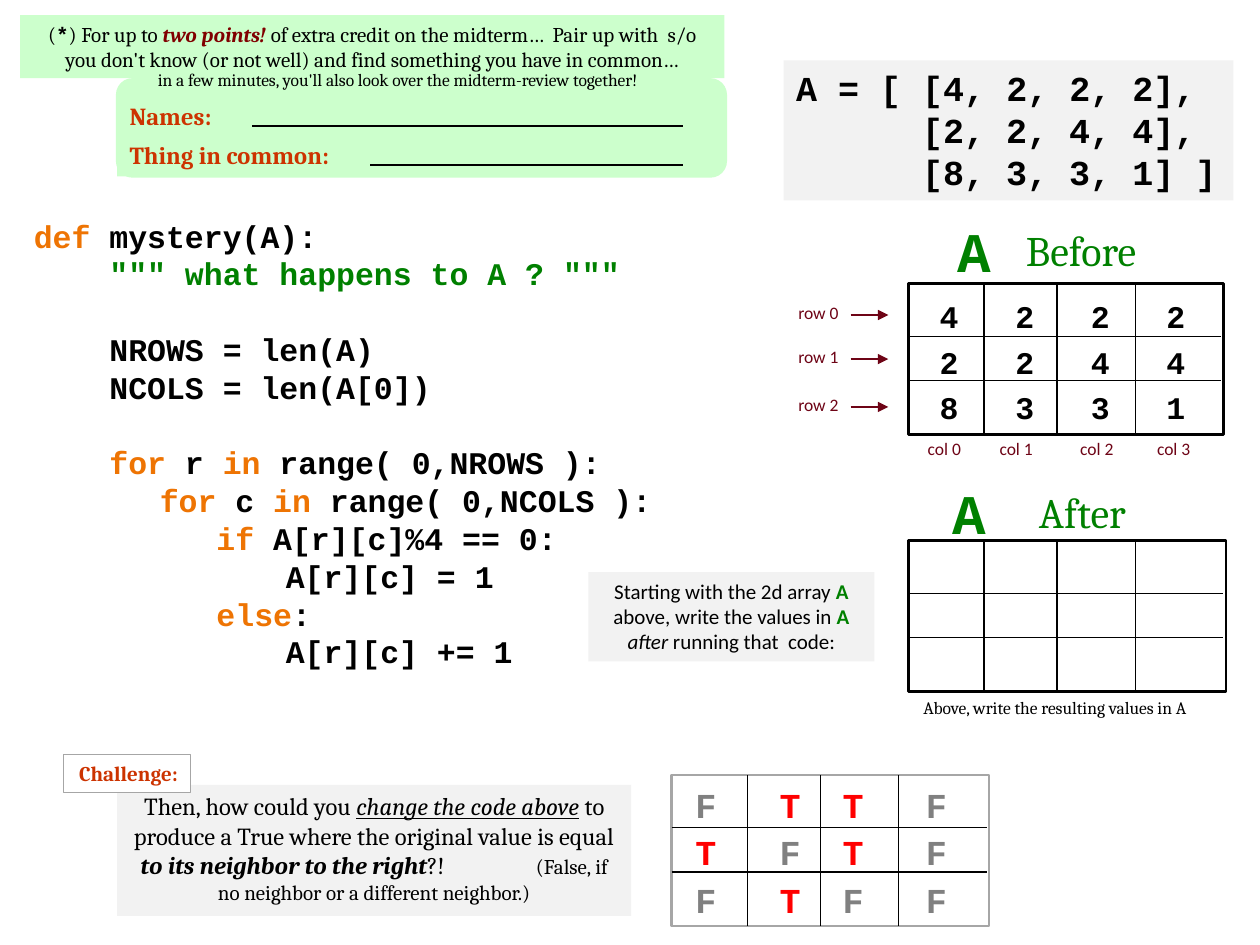
from lxml import etree
from pptx import Presentation
from pptx import util as u
from pptx.dml.color import RGBColor
from pptx.enum import shapes, text
from pptx.oxml.ns import qn

PX = 9144  # 100 px to the inch
MONO, SERIF, SANS = "Courier New", "Cambria", "Calibri"
BLACK, GREEN, RED, GRAY = "000000", "008000", "FF0000", "808080"
MAROON, RUST, SILVER = "6E0416", "CC3300", "A6A6A6"
MINT, PALE = "CCFFCC", "F2F2F2"
CENTER, RIGHT = text.PP_ALIGN.CENTER, text.PP_ALIGN.RIGHT

# Content: a run is a string, or a (string, format) pair
KEY = dict(color="EE7403")
HIT = dict(color=RED)
LETTER = dict(color=GREEN, bold=True)

# (indent in px, points of space before, runs)
CODE = [
    (0, 0, [("def", KEY), " mystery(A):"]),
    (60, 0, [('""" what happens to A ? """', dict(color=GREEN))]),
    (60, 21.6, ["NROWS = len(A)"]),
    (60, 0, ["NCOLS = len(A[0])"]),
    (60, 21.6, [("for ", KEY), "r ", ("in", KEY), " range( 0,NROWS ):"]),
    (100, 0, [("for ", KEY), "c ", ("in", KEY), " range( 0,NCOLS ):"]),
    (145, 0, [("if ", KEY), "A[r][c]%4 == 0:"]),
    (200, 0, ["A[r][c] = 1"]),
    (145, 0, [("else", KEY), ":"]),
    (200, 0, ["A[r][c] += 1"]),
]
ARRAY = [(0, 0, ["A = [ [4, 2, 2, 2],"]),
         (100, 0, ["[2, 2, 4, 4],"]),
         (100, 0, ["[8, 3, 3, 1] ]"])]
BEFORE = ["4222", "2244", "8331"]
ANSWERS = ["FTTF", "TFTF", "FTFF"]
TASK = ["Starting with the 2d array ", ("A ", LETTER), "above, write the values in ",
        ("A ", LETTER), ("after", dict(italic=True)), " running that  code:"]
CHALLENGE = ["Then, how could you ",
             ("change the code above", dict(italic=True, underline=True)),
             " to produce a True where the original value is equal ",
             ("to its neighbor to the right", dict(bold=True, italic=True)),
             "?!", (" ", dict(spacing=49)),
             ("(False, if no neighbor or a different neighbor.)", dict(size=12))]
CREDIT = ["(", ("*", dict(font=MONO, bold=True)), ") For up to ",
          ("two points!", dict(color="800000", bold=True, italic=True)),
          " of extra credit on the midterm…  Pair up with  s/o you don't know "
          "(or not well) and find something you have in common…"]

# Grid geometry, relative to its corner
GRID_H = 120
ROW_LINES, COL_LINES = (42, 77), (60, 118, 180)

prs = Presentation()
prs.slide_width, prs.slide_height = 1000 * PX, 750 * PX
slide = prs.slides.add_slide(prs.slide_layouts[6])


def rgb(value):
    return RGBColor.from_string(value)


def write(shape, paragraphs, size=12, font=SERIF, color=BLACK, bold=False,
          align=None, wrap=True, spacing=None, before=0):
    frame = shape.text_frame
    frame.word_wrap = wrap
    frame.vertical_anchor = text.MSO_ANCHOR.TOP
    for i, (indent, gap, runs) in enumerate(paragraphs):
        par = frame.paragraphs[0] if i == 0 else frame.add_paragraph()
        par.alignment = align or text.PP_ALIGN.LEFT
        par.line_spacing = spacing
        par.space_before = u.Pt(gap + before)
        props = par._p.get_or_add_pPr()
        props.set("marL", str(indent * PX))
        props.set("indent", "0")
        for part in runs:
            words, change = (part, {}) if isinstance(part, str) else part
            run = par.add_run()
            run.text = words
            run.font.size = u.Pt(change.get("size", size))
            run.font.name = change.get("font", font)
            run.font.color.rgb = rgb(change.get("color", color))
            run.font.bold = change.get("bold", bold)
            run.font.italic = change.get("italic", False)
            run.font.underline = change.get("underline", False)
            if "spacing" in change:
                run.font._element.set("spc", str(change["spacing"] * 100))


def as_paragraphs(words):
    """Accept a string, a list of runs, or a list of paragraphs."""
    if isinstance(words, str):
        words = [words]
    return words if isinstance(words[0], tuple) else [(0, 0, words)]


def label(box, words, **style):
    area = slide.shapes.add_textbox(*[v * PX for v in box])
    write(area, as_paragraphs(words), **style)


def panel(box, words=None, fill=None, line=None, width=1.5, rounded=False, **style):
    kind = shapes.MSO_SHAPE.ROUNDED_RECTANGLE if rounded else shapes.MSO_SHAPE.RECTANGLE
    area = slide.shapes.add_shape(kind, *[v * PX for v in box])
    area.shadow.inherit = False
    if fill:
        area.fill.solid()
        area.fill.fore_color.rgb = rgb(fill)
    else:
        area.fill.background()
    if line:
        area.line.color.rgb = rgb(line)
        area.line.width = u.Pt(width)
    else:
        area.line.fill.background()
    if words:
        write(area, as_paragraphs(words), **style)


def rule(x1, y1, x2, y2, color=BLACK, width=0.75, arrow=False):
    link = slide.shapes.add_connector(shapes.MSO_CONNECTOR.STRAIGHT,
                                      x1 * PX, y1 * PX, x2 * PX, y2 * PX)
    link.line.color.rgb = rgb(color)
    link.line.width = u.Pt(width)
    if arrow:
        etree.SubElement(link.line._get_or_add_ln(), qn("a:tailEnd"), type="triangle")
    etree.SubElement(link._element.spPr, qn("a:effectLst"))


def grid(x, y, width=252, line=BLACK):
    panel((x, y, width, GRID_H), line=line)
    for dy in ROW_LINES:
        rule(x, y + dy, x + width - 2, y + dy)
    for dx in COL_LINES:
        rule(x + dx, y + GRID_H, x + dx, y)


def fill_columns(rows, lefts, y, **style):
    """One text box for each column of a grid, one paragraph for each row."""
    for left, column in zip(lefts, zip(*rows)):
        cells = [(0, 0, [(mark, HIT if mark == "T" else {})]) for mark in column]
        label((left, y, 40, GRID_H), cells, font=MONO, bold=True, **style)


# Code and array definition
label((17, 167, 567, 404), CODE, size=18, font=MONO, bold=True)
panel((622, 48, 357, 111), ARRAY, fill=PALE, size=20, font=MONO, bold=True, wrap=False)

# Grids before and after
grid(721, 225, width=250)
fill_columns(BEFORE, [736 + 60 * i for i in range(4)], 225, size=18, spacing=1.2)
grid(721, 429)
for heading, x, y, letter_x, letter_y in [("Before", 783, 173, 750, 167),
                                          ("After", 784, 381, 746, 375)]:
    label((x, y, 150, 50), heading, size=24, color=GREEN, align=CENTER)
    label((letter_x, letter_y, 47, 63), "A", size=32, font=MONO, color=GREEN,
          bold=True, align=CENTER, wrap=False)

# Row and column labels
AXIS = dict(size=10, font=SANS, color=MAROON, align=CENTER, wrap=False)
for i, y in enumerate((235, 270, 308)):
    label((623, y, 53, 27), f"row {i}", **AXIS)
    rule(675, y + 15, 705, y + 15, MAROON, 1.5, arrow=True)
for i, x in enumerate((726, 783, 847, 908)):
    label((x, 343, 47, 27), f"col {i}", **AXIS)

# Instructions for the after grid
label((723, 548, 247, 27), "Above, write the resulting values in A", size=10, wrap=False)
panel((467, 454, 227, 71), TASK, fill=PALE, font=SANS, align=CENTER)

# Challenge with its true/false grid
grid(533, 615, line=SILVER)
fill_columns(ANSWERS, (542, 609, 659, 725), 617, size=20, color=GRAY, before=3)
panel((93, 623, 408, 104), CHALLENGE, fill=PALE, size=14, align=CENTER)
panel((50, 599, 101, 30), "Challenge:", fill="FFFFFF", line=SILVER, width=0.25,
      color=RUST, bold=True, align=RIGHT)

# Extra-credit form
panel((16, 12, 559, 50), CREDIT, fill=MINT, align=CENTER)
panel((92, 62, 485, 79), fill=MINT, rounded=True)
for field, y, width, line_x in [("Thing in common:", 106, 184, 294), ("Names:", 75, 86, 200)]:
    panel((93, y, width, 34), field, fill=MINT, size=14, color=RUST, bold=True, wrap=False)
    rule(line_x, y + 25, 542, y + 25)
label((102, 50, 427, 27), "in a few minutes, you'll also look over the midterm-review together!",
      size=10, align=CENTER, wrap=False)

prs.save("out.pptx")
